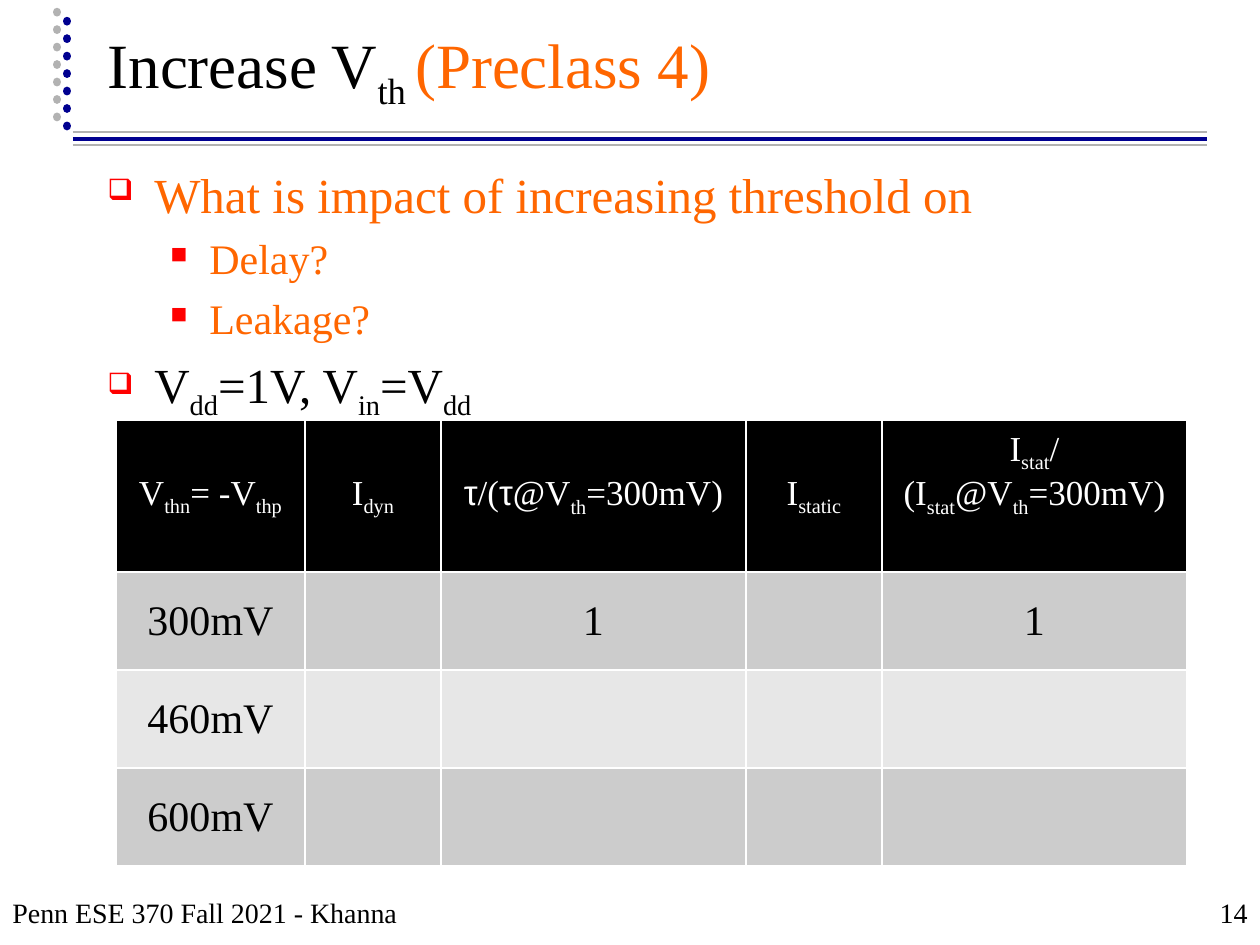
"""Build the slide on raising the threshold voltage."""
import pptx
import pptx.util
import pptx.dml.color
import pptx.enum.dml
import pptx.enum.shapes
import pptx.enum.text
import pptx.oxml
import pptx.oxml.ns
import lxml.etree

Pt = pptx.util.Pt
RGB = pptx.dml.color.RGBColor
ALIGN = pptx.enum.text.PP_ALIGN
ANCHOR = pptx.enum.text.MSO_ANCHOR
DASH = pptx.enum.dml.MSO_LINE
qn = pptx.oxml.ns.qn
NS = pptx.oxml.ns.nsdecls("a")

BLACK = RGB(0, 0, 0)
WHITE = RGB(255, 255, 255)
NAVY = RGB(0, 0, 0x90)
GREY = RGB(0xB2, 0xB2, 0xB2)
ORANGE = RGB(0xFF, 0x66, 0)
RED = RGB(255, 0, 0)
DARK = RGB(0xCC, 0xCC, 0xCC)
LIGHT = RGB(0xE7, 0xE7, 0xE7)
FONT = "Times New Roman"


def px(*nums):
    """Turn pixels into EMU."""
    return [round(n * 914400 / 126) for n in nums]


def write(par, text, size, color):
    """Add runs to a paragraph; every second part between bars is a subscript."""
    for i, part in enumerate(text.split("|")):
        if part:
            run = par.add_run()
            run.text = part
            run.font.name = "Arial" if part == "τ" else FONT
            run.font.size = Pt(size)
            run.font.bold = False
            run.font.color.rgb = color
            if i % 2:
                run.font._element.set("baseline", "-25000")


deck = pptx.Presentation()
deck.slide_width, deck.slide_height = px(1260, 945)
slide = deck.slides.add_slide(deck.slide_layouts[5])
shapes = slide.shapes

rules = [
    (73, 139, 1207, 139, NAVY, 2, None),
    (73, 145, 1207, 145, GREY, 1, None),
    (73, 132, 1207, 132, GREY, 1, None),
    (57, 117, 57, 1, GREY, 5, DASH.ROUND_DOT),
    (67, 126, 67, 10, NAVY, 5, DASH.ROUND_DOT),
]
for x1, y1, x2, y2, color, width, dash in rules:
    rule = shapes.add_connector(
        pptx.enum.shapes.MSO_CONNECTOR.STRAIGHT, *px(x1, y1, x2, y2))
    rule.line.color.rgb = color
    rule.line.width = Pt(width)
    if dash:
        rule.line.dash_style = dash
        rule.line._ln.set("cap", "rnd")
    lxml.etree.SubElement(rule._element.spPr, qn("a:effectLst"))

title = shapes.title
title.left, title.top, title.width, title.height = px(95, 14, 1073, 104)
frame = title.text_frame
frame.word_wrap = True
frame.auto_size = pptx.enum.text.MSO_AUTO_SIZE.NONE
frame.vertical_anchor = ANCHOR.BOTTOM
head = frame.paragraphs[0]
head.alignment = ALIGN.LEFT
write(head, "Increase V|th |(Preclass 4)", 36, BLACK)
head.runs[-1].font.color.rgb = ORANGE

points = [
    (0, "What is impact of increasing threshold on", ORANGE),
    (1, "Delay?", ORANGE),
    (1, "Leakage?", ORANGE),
    (0, "V|dd|=1V, V|in|=V|dd", BLACK),
]
levels = [(28, 47, 47, "❑", 60, 6.4), (24, 102, 39, "■", 55, 5.5)]
body = shapes.add_textbox(*px(95, 158, 1071, 693)).text_frame
body.word_wrap = True
for i, (level, text, color) in enumerate(points):
    size, left, hang, mark, scale, gap = levels[level]
    par = body.add_paragraph() if i else body.paragraphs[0]
    par.level = level
    par.space_before = Pt(gap if i else 0)
    props = par._p.get_or_add_pPr()
    props.set("marL", str(px(left)[0]))
    props.set("indent", str(px(-hang)[0]))
    for xml in (f'<a:buClr {NS}><a:srgbClr val="{RED}"/></a:buClr>',
                f'<a:buSzPct {NS} val="{scale}000"/>',
                f'<a:buChar {NS} char="{mark}"/>'):
        props.append(pptx.oxml.parse_xml(xml))
    write(par, text, size, color)

notes = [
    (998, 262, "14", ALIGN.RIGHT),
    (0, 683, "Penn ESE 370 Fall 2021 - Khanna", ALIGN.LEFT),
]
for left, width, text, align in notes:
    frame = shapes.add_textbox(*px(left, 872, width, 63)).text_frame
    frame.word_wrap = True
    frame.vertical_anchor = ANCHOR.BOTTOM
    frame.paragraphs[0].alignment = align
    write(frame.paragraphs[0], text, 16, BLACK)

rows = [
    ["V|thn|= -V|thp", "I|dyn", "τ||/(||τ||@V|th|=300mV)", "I|static",
     "I|stat|/(I|stat|@V|th|=300mV)"],
    ["300mV", "", "1", "", "1"],
    ["460mV", "", "", "", ""],
    ["600mV", "", "", "", ""],
]
widths = [189, 136, 305, 136, 305]
heights = [139, 98, 98, 98]
fills = [BLACK, DARK, LIGHT, DARK]
table = shapes.add_table(
    4, 5, *px(116, 420, sum(widths), sum(heights))).table
for col, width in zip(table.columns, px(*widths)):
    col.width = width
for row, height in zip(table.rows, px(*heights)):
    row.height = height
for r, texts in enumerate(rows):
    for c, text in enumerate(texts):
        cell = table.cell(r, c)
        cell.vertical_anchor = ANCHOR.MIDDLE
        par = cell.text_frame.paragraphs[0]
        par.alignment = ALIGN.CENTER
        write(par, text, 24 if r else 20, BLACK if r else WHITE)
        props = cell._tc.get_or_add_tcPr()
        for side in ("lnL", "lnR", "lnT", "lnB"):
            props.append(pptx.oxml.parse_xml(
                f'<a:{side} {NS} w="12700"><a:solidFill>'
                f'<a:srgbClr val="{WHITE}"/></a:solidFill></a:{side}>'))
        cell.fill.solid()
        cell.fill.fore_color.rgb = fills[r]
table.cell(0, 4).margin_bottom = px(50)[0]

deck.save("out.pptx")
